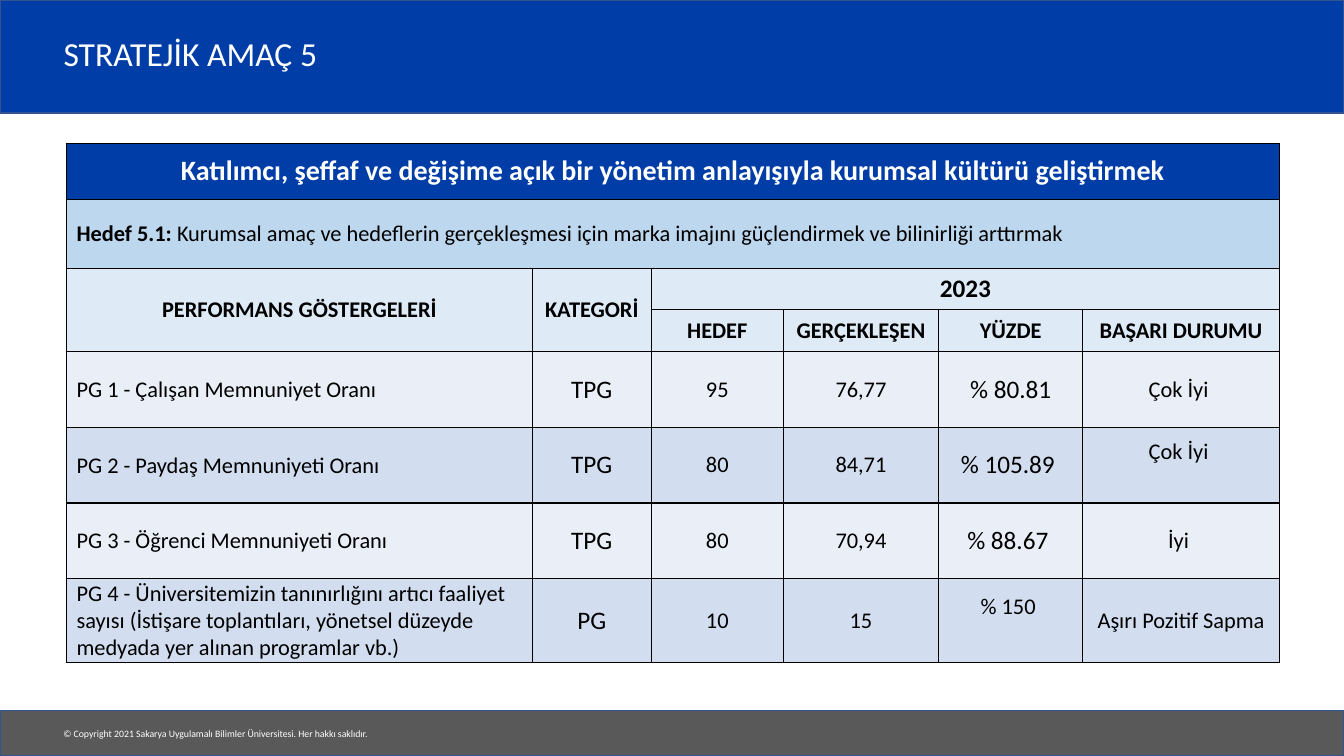
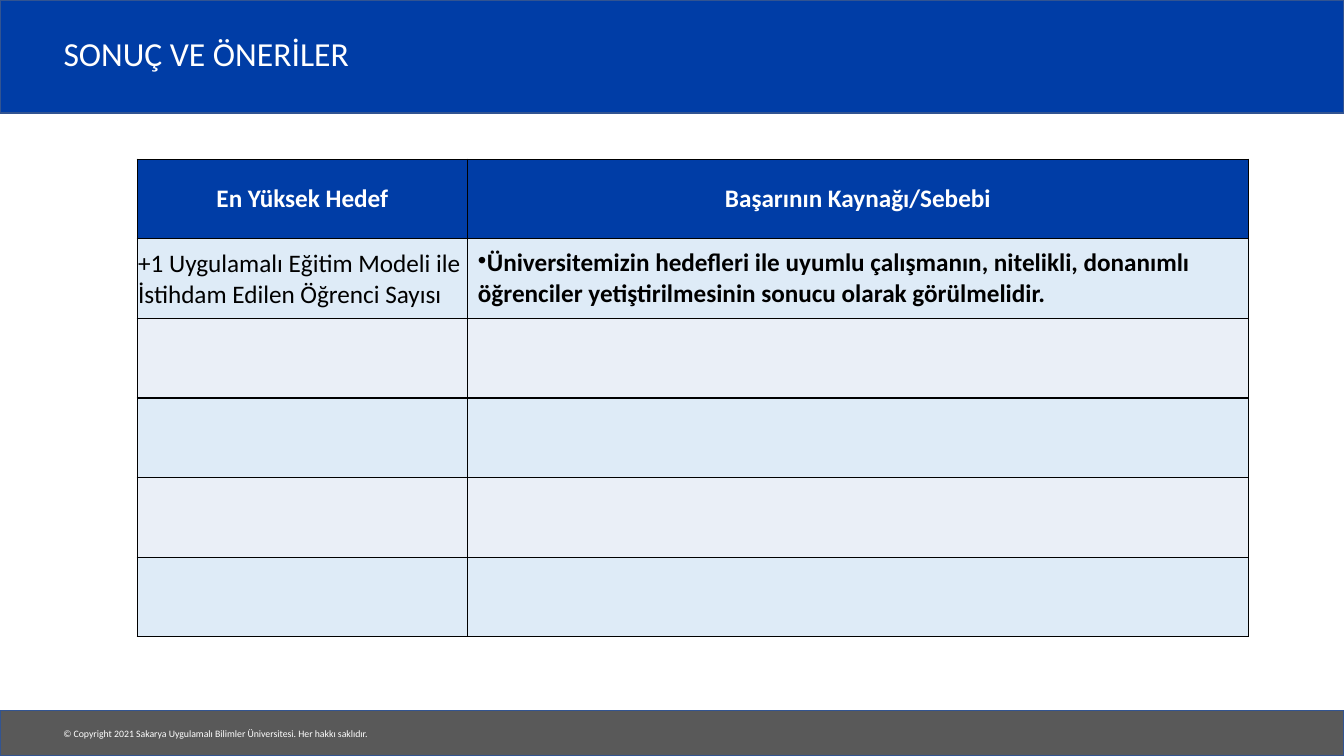
from dataclasses import dataclass
from itertools import product
from typing import NamedTuple, Optional

from lxml import etree
from pptx import Presentation
from pptx import util as u
from pptx.dml import color
from pptx.enum import shapes, text
from pptx.oxml import ns
from pptx.slide import Slide, SlideLayout


@dataclass(frozen=True)
class Theme:
    font: str = "Calibri"
    blue: str = "003DA6"
    grey: str = "595959"
    outline: str = "325491"
    white: str = "FFFFFF"
    black: str = "000000"
    goal: str = "BDD7EE"
    heading: str = "DEEBF7"
    light: str = "EAEFF7"
    medium: str = "D2DEEF"
    title: float = 24
    banner: float = 20
    large: float = 18
    normal: float = 16
    footer: float = 7


THEME = Theme()


class Box(NamedTuple):
    left: float
    top: float
    width: float
    height: float


class Band(NamedTuple):
    box: Box
    fill: str


class Margins(NamedTuple):
    left: float = 0.1
    top: float = 0.05
    right: float = 0.1
    bottom: float = 0.05


class Span(NamedTuple):
    text: str
    bold: bool = False


@dataclass(frozen=True)
class Entry:
    spans: tuple[Span, ...] = ()
    size: float = THEME.normal
    ink: str = THEME.black
    centred: bool = True
    bullet: bool = False
    margins: Margins = Margins()


class Row(NamedTuple):
    height: float
    fill: str
    entries: list[Optional[Entry]]


class Merge(NamedTuple):
    top: int
    left: int
    bottom: int
    right: int


@dataclass(frozen=True)
class Grid:
    left: float
    top: float
    columns: list[float]
    rows: list[Row]
    merges: tuple[Merge, ...] = ()


class Indicator(NamedTuple):
    name: str
    category: str
    target: str
    actual: str
    percent: Entry
    status: Entry
    height: float = 0.75


BANDS = (
    Band(Box(0, 0, 13.33, 1.12), THEME.blue),
    Band(Box(0, 7.05, 13.33, 0.45), THEME.grey),
)
TITLE_BOX = Box(0.53, 0.19, 11.03, 0.73)
FOOTER_BOX = Box(0.53, 7.17, 3.29, 0.22)
FOOTER = "© Copyright 2021 Sakarya Uygulamalı Bilimler Üniversitesi. Her hakkı saklıdır."
SNUG = Margins(0.1, 0.01, 0.01, 0)
TIGHT = Margins(0.01, 0.01, 0.01, 0)
RAISED = Margins(bottom=0.32)


def rgb(value: str) -> color.RGBColor:
    return color.RGBColor.from_string(value)


def inches(box: Box) -> list[u.Length]:
    return [u.Inches(length) for length in box]


def add_span(para, span: Span, size: float, ink: str) -> None:
    run = para.add_run()
    run.text = span.text
    run.font.name = THEME.font
    run.font.size = u.Pt(size)
    run.font.bold = span.bold
    run.font.color.rgb = rgb(ink)


def add_band(page: Slide, band: Band):
    shape = page.shapes.add_shape(shapes.MSO_SHAPE.RECTANGLE, *inches(band.box))
    shape.shadow.inherit = False
    shape.fill.solid()
    shape.fill.fore_color.rgb = rgb(band.fill)
    shape.line.color.rgb = rgb(THEME.outline)
    shape.line.width = u.Pt(1)
    return shape


def add_footer(page: Slide):
    box = page.shapes.add_textbox(*inches(FOOTER_BOX))
    box.text_frame.word_wrap = False
    box.text_frame.auto_size = text.MSO_AUTO_SIZE.SHAPE_TO_FIT_TEXT
    add_span(box.text_frame.paragraphs[0], Span(FOOTER), THEME.footer, THEME.white)
    return box


def dress_layout(layout: SlideLayout, page: Slide) -> None:
    for holder in list(layout.placeholders):
        if holder.placeholder_format.type == shapes.PP_PLACEHOLDER.TITLE:
            holder.left, holder.top, holder.width, holder.height = inches(TITLE_BOX)
        else:
            layout.shapes.element.remove(holder.element)
    for shape in [*(add_band(page, band) for band in BANDS), add_footer(page)]:
        layout.shapes.element.append(shape.element)


def set_title(page: Slide, title: str) -> None:
    frame = page.shapes.title.text_frame
    frame.auto_size = text.MSO_AUTO_SIZE.NONE
    frame.vertical_anchor = text.MSO_ANCHOR.MIDDLE
    para = frame.paragraphs[0]
    para.alignment = text.PP_ALIGN.LEFT
    para.line_spacing = 0.9
    add_span(para, Span(title), THEME.title, THEME.white)


def add_borders(cell) -> None:
    properties = cell._tc.get_or_add_tcPr()
    for side in ("a:lnL", "a:lnR", "a:lnT", "a:lnB"):
        line = etree.SubElement(properties, ns.qn(side), w=str(u.Pt(1)))
        fill = etree.SubElement(line, ns.qn("a:solidFill"))
        etree.SubElement(fill, ns.qn("a:srgbClr"), val=THEME.black)


def add_bullet(para) -> None:
    properties = para._p.get_or_add_pPr()
    properties.set("marL", "0")
    properties.set("indent", "0")
    etree.SubElement(properties, ns.qn("a:buChar"), char="•")


def fill_cell(cell, entry: Entry) -> None:
    cell.vertical_anchor = text.MSO_ANCHOR.MIDDLE
    (cell.margin_left, cell.margin_top,
     cell.margin_right, cell.margin_bottom) = map(u.Inches, entry.margins)
    para = cell.text_frame.paragraphs[0]
    para.alignment = text.PP_ALIGN.CENTER if entry.centred else text.PP_ALIGN.LEFT
    if entry.bullet:
        add_bullet(para)
    for span in entry.spans:
        add_span(para, span, entry.size, entry.ink)


def add_grid(page: Slide, grid: Grid) -> None:
    box = Box(grid.left, grid.top, sum(grid.columns), sum(row.height for row in grid.rows))
    table = page.shapes.add_table(len(grid.rows), len(grid.columns), *inches(box)).table
    table.first_row = table.horz_banding = False
    for column, width in zip(table.columns, grid.columns):
        column.width = u.Inches(width)
    for line, row in zip(table.rows, grid.rows):
        line.height = u.Inches(row.height)
    for y, x in product(range(len(grid.rows)), range(len(grid.columns))):
        cell, row = table.cell(y, x), grid.rows[y]
        add_borders(cell)
        cell.fill.solid()
        cell.fill.fore_color.rgb = rgb(row.fill)
        if row.entries[x]:
            fill_cell(cell, row.entries[x])
    for merge in grid.merges:
        table.cell(merge.top, merge.left).merge(table.cell(merge.bottom, merge.right))


def plain(words: str, size: float = THEME.normal, margins: Margins = Margins()) -> Entry:
    return Entry((Span(words),), size, margins=margins)


def strong(words: str, size: float = THEME.normal, ink: str = THEME.black) -> Entry:
    return Entry((Span(words, True),), size, ink)


def indicator_row(item: Indicator, fill: str) -> Row:
    name = Entry((Span(item.name),), centred=False, margins=SNUG)
    return Row(item.height, fill, [
        name, plain(item.category, THEME.large), plain(item.target),
        plain(item.actual), item.percent, item.status,
    ])


INDICATORS = (
    Indicator("PG 1 - Çalışan Memnuniyet Oranı", "TPG", "95", "76,77",
              plain("% 80.81", THEME.large), plain("Çok İyi ")),
    Indicator("PG 2 - Paydaş Memnuniyeti Oranı", "TPG", "80", "84,71",
              plain("% 105.89 ", THEME.large), plain("Çok İyi ", margins=RAISED)),
    Indicator("PG 3 - Öğrenci Memnuniyeti Oranı", "TPG", "80", "70,94",
              plain("% 88.67 ", THEME.large), plain("İyi ")),
    Indicator("PG 4 - Üniversitemizin tanınırlığını artıcı faaliyet sayısı "
              "(İstişare toplantıları, yönetsel düzeyde medyada yer alınan programlar vb.)",
              "PG", "10", "15", plain("% 150 ", margins=RAISED),
              plain("Aşırı Pozitif Sapma"), 0.83),
)

GOAL = Entry((
    Span("Hedef 5.1: ", True),
    Span("Kurumsal amaç ve hedeflerin gerçekleşmesi için marka imajını "
         "güçlendirmek ve bilinirliği arttırmak"),
), centred=False)

PERFORMANCE = Grid(
    0.66, 1.42, [4.62, 1.18, 1.31, 1.54, 1.43, 1.95],
    [
        Row(0.56, THEME.blue, [strong(
            "Katılımcı, şeffaf ve değişime açık bir yönetim anlayışıyla "
            "kurumsal kültürü geliştirmek", THEME.banner, THEME.white)] + [None] * 5),
        Row(0.68, THEME.goal, [GOAL] + [None] * 5),
        Row(0.41, THEME.heading, [
            strong("PERFORMANS GÖSTERGELERİ"), strong("KATEGORİ"),
            strong("2023", THEME.large), None, None, None]),
        Row(0.42, THEME.heading, [None, None] + [
            strong(label) for label in ("HEDEF", "GERÇEKLEŞEN", "YÜZDE", "BAŞARI DURUMU")]),
        *(indicator_row(item, (THEME.light, THEME.medium)[index % 2])
          for index, item in enumerate(INDICATORS)),
    ],
    (Merge(0, 0, 0, 5), Merge(1, 0, 1, 5), Merge(2, 0, 3, 0),
     Merge(2, 1, 3, 1), Merge(2, 2, 2, 5)),
)

RESULT = Entry((Span("+1 Uygulamalı Eğitim Modeli ile İstihdam Edilen Öğrenci Sayısı"),),
               THEME.large, centred=False, margins=TIGHT)
REASON = Entry((Span("Üniversitemizin hedefleri ile uyumlu çalışmanın, nitelikli, donanımlı "
                     "öğrenciler yetiştirilmesinin sonucu olarak görülmelidir.", True),),
               THEME.large, centred=False, bullet=True)

CONCLUSIONS = Grid(
    1.36, 1.58, [3.28, 7.74],
    [
        Row(0.79, THEME.blue, [strong(label, THEME.large, THEME.white)
                               for label in ("En Yüksek Hedef", "Başarının Kaynağı/Sebebi")]),
        Row(0.79, THEME.heading, [RESULT, REASON]),
        *(Row(0.79, fill, [None, None])
          for fill in (THEME.light, THEME.heading, THEME.light)),
        Row(0.79, THEME.heading, [None, None]),
    ],
)

PAGES = (("STRATEJİK AMAÇ 5", PERFORMANCE), ("SONUÇ VE ÖNERİLER", CONCLUSIONS))


def main() -> None:
    deck = Presentation()
    deck.slide_width, deck.slide_height = u.Inches(13.33), u.Inches(7.5)
    layout = deck.slide_layouts.get_by_name("Title Only")
    pages = [deck.slides.add_slide(layout) for _ in PAGES]
    dress_layout(layout, pages[0])
    for page, (title, grid) in zip(pages, PAGES):
        set_title(page, title)
        add_grid(page, grid)
    deck.save("out.pptx")


if __name__ == "__main__":
    main()
